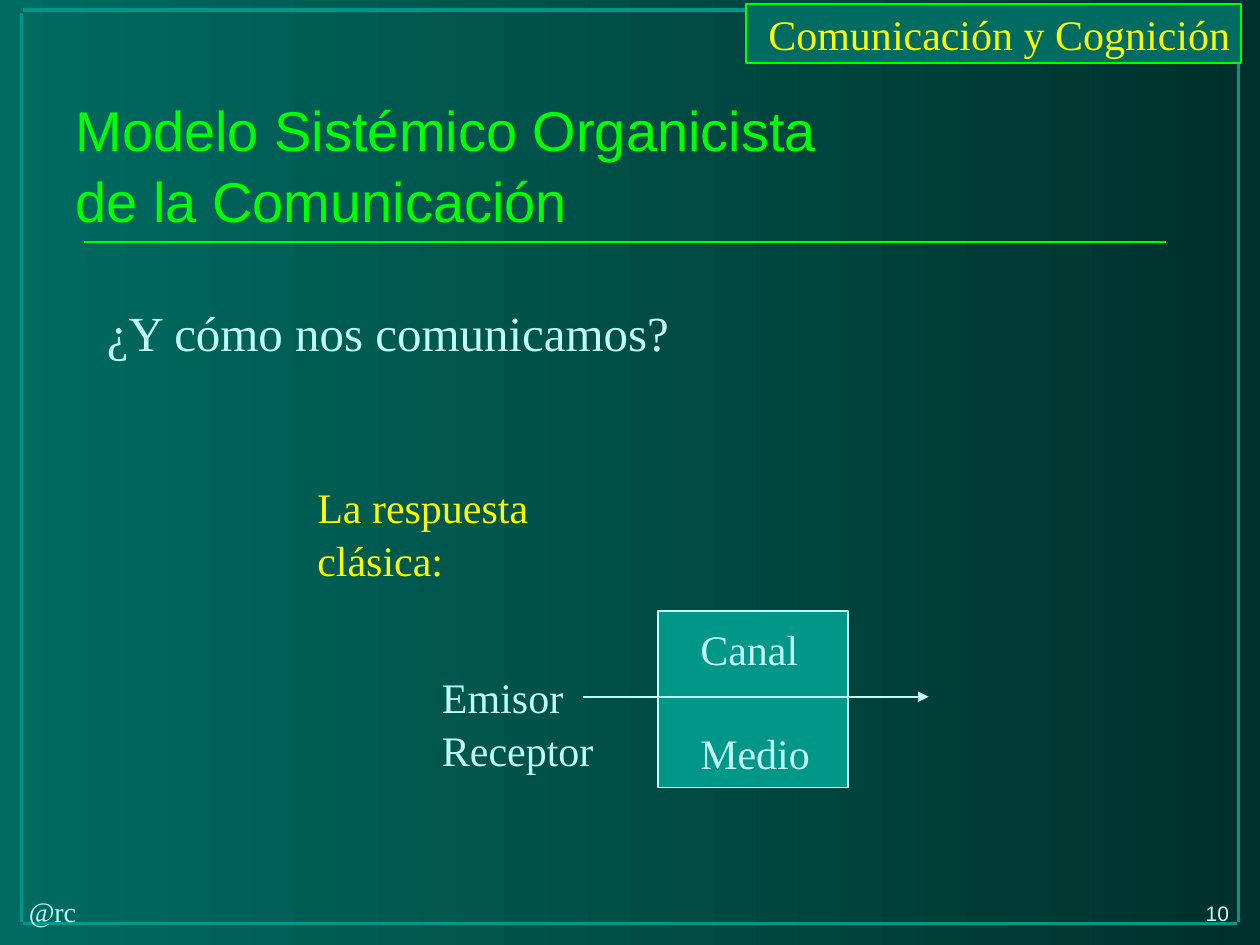
from dataclasses import dataclass

from lxml import etree
from pptx import Presentation
from pptx import util as u
from pptx.dml.color import RGBColor
from pptx.enum import shapes, text
from pptx.oxml.ns import qn

COLORS = {
    "background": "006B61",
    "background_end": "00302B",
    "frame": "009688",
    "pale": "C0FEF9",
    "yellow": "FAFD00",
    "green": "00FF00",
}
SERIF, SANS = "Times New Roman", "Arial"


@dataclass
class Line:
    start: tuple[float, float]
    end: tuple[float, float]
    color: str
    width: float = 1
    arrow: bool = False


@dataclass
class Box:
    left: float
    top: float
    width: float
    height: float


def rgb(name: str) -> RGBColor:
    return RGBColor.from_string(COLORS[name])


def add_line(slide, line: Line) -> None:
    points = [u.Inches(value) for value in (*line.start, *line.end)]
    connector = slide.shapes.add_connector(shapes.MSO_CONNECTOR.STRAIGHT, *points)
    connector.line.color.rgb = rgb(line.color)
    connector.line.width = u.Pt(line.width)
    if line.arrow:
        outline = connector.line._get_or_add_ln()
        etree.SubElement(outline, qn("a:tailEnd"), type="triangle")
    etree.SubElement(connector._element.spPr, qn("a:effectLst"))


def add_rectangle(slide, box: Box, fill: str, line: str) -> None:
    shape = slide.shapes.add_shape(
        shapes.MSO_SHAPE.RECTANGLE,
        u.Inches(box.left), u.Inches(box.top), u.Inches(box.width), u.Inches(box.height),
    )
    shape.shadow.inherit = False
    shape.fill.solid()
    shape.fill.fore_color.rgb = rgb(fill)
    shape.line.color.rgb = rgb(line)
    shape.line.width = u.Pt(1)


def add_text(slide, content: str, box: Box, *, size: float = 24, color: str = "pale",
             font: str = SERIF, wrap: bool = True, gap: float = 0,
             anchor=text.MSO_ANCHOR.TOP) -> None:
    """Each newline starts a paragraph; a vertical tab breaks the line."""
    shape = slide.shapes.add_textbox(
        u.Inches(box.left), u.Inches(box.top), u.Inches(box.width), u.Inches(box.height)
    )
    frame = shape.text_frame
    frame.word_wrap = wrap
    frame.vertical_anchor = anchor
    frame.text = content
    for index, paragraph in enumerate(frame.paragraphs):
        paragraph.line_spacing = 1.05
        paragraph.space_before = u.Pt(gap if index else 0)
        paragraph.font.size = u.Pt(size)
        for run in paragraph.runs:
            run.font.size = u.Pt(size)
            run.font.name = font
            run.font.color.rgb = rgb(color)


def main() -> None:
    presentation = Presentation()
    presentation.slide_width = u.Inches(10)
    presentation.slide_height = u.Inches(7.5)
    slide = presentation.slides.add_slide(presentation.slide_layouts[6])

    # Background gradient, left to right
    fill = slide.background.fill
    fill.gradient()
    fill.gradient_angle = 0
    for stop, name in zip(fill.gradient_stops, ("background", "background_end")):
        stop.color.rgb = rgb(name)

    # Frame
    left, top, right, bottom = 0.17, 0.08, 9.83, 7.33
    for x in (left, right):
        add_line(slide, Line((x, top + 0.02), (x, bottom - 0.01), "frame", 2))
    for y in (top, bottom):
        add_line(slide, Line((left + 0.01, y), (right - 0.01, y), "frame", 2))

    # Header and footer
    add_rectangle(slide, Box(5.92, 0.03, 3.93, 0.47), "background", "green")
    add_text(slide, "Comunicación y Cognición", Box(6, 0, 4.04, 0.5), color="yellow")
    add_text(slide, "@rc", Box(0.13, 7.04, 0.58, 0.36), size=16, wrap=False)
    add_text(slide, "10", Box(9.47, 7.09, 0.49, 0.3), size=12, font=SANS, wrap=False)

    # Title and rule
    add_text(slide, "Modelo Sistémico Organicista\vde la Comunicación",
             Box(0.5, 0.67, 8.92, 1.25), size=32, color="green", font=SANS,
             anchor=text.MSO_ANCHOR.MIDDLE)
    add_line(slide, Line((0.67, 1.92), (9.25, 1.92), "green"))

    # Question and answer
    add_text(slide, "¿Y cómo nos comunicamos?", Box(0.75, 2.33, 4.67, 0.56),
             size=28, wrap=False)
    add_text(slide, "La respuesta clásica:", Box(2.42, 3.75, 2, 0.9), color="yellow")

    # Sender, channel and receiver
    add_rectangle(slide, Box(5.22, 4.85, 1.51, 1.4), "frame", "pale")
    add_text(slide, "Emisor Receptor", Box(3.41, 5.26, 1.5, 0.9))
    add_text(slide, "Canal\nMedio", Box(5.46, 4.88, 1.07, 1.3), wrap=False, gap=29)
    add_line(slide, Line((4.63, 5.53), (7.37, 5.53), "pale", arrow=True))

    presentation.save("out.pptx")


if __name__ == "__main__":
    main()
